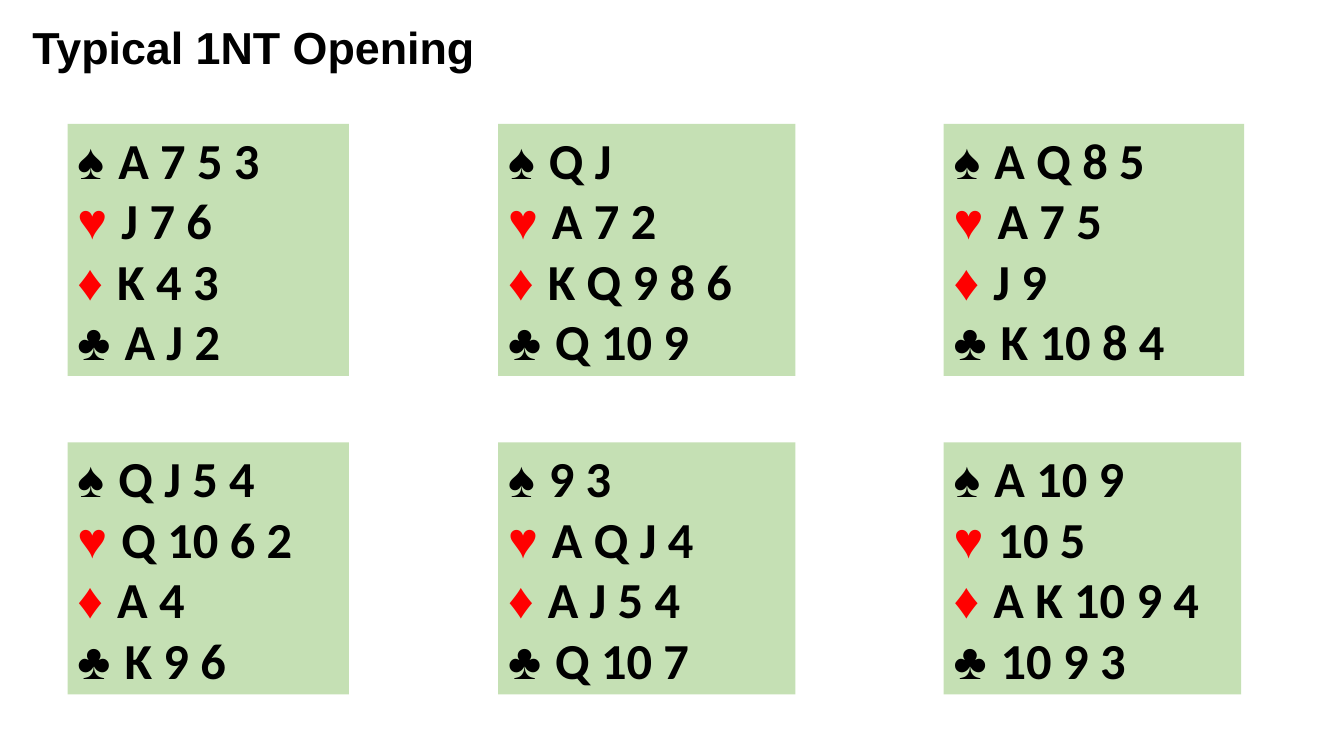
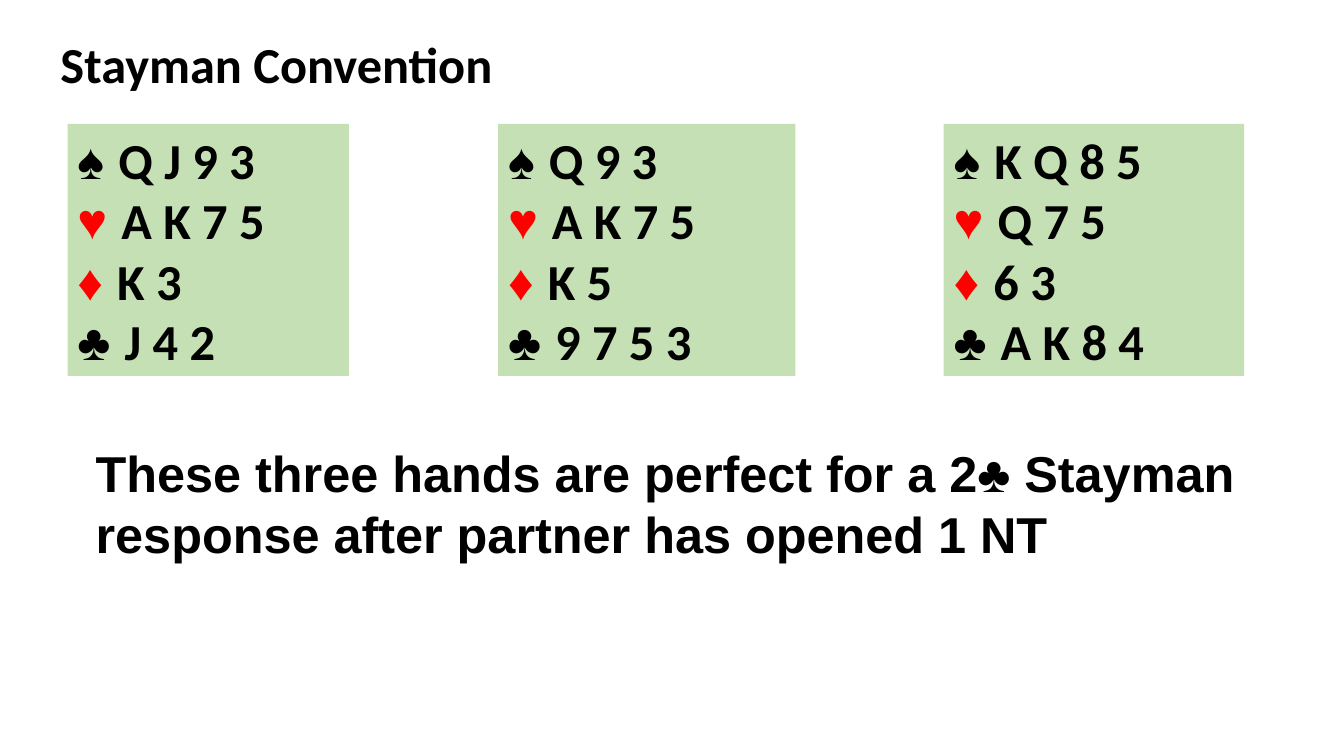
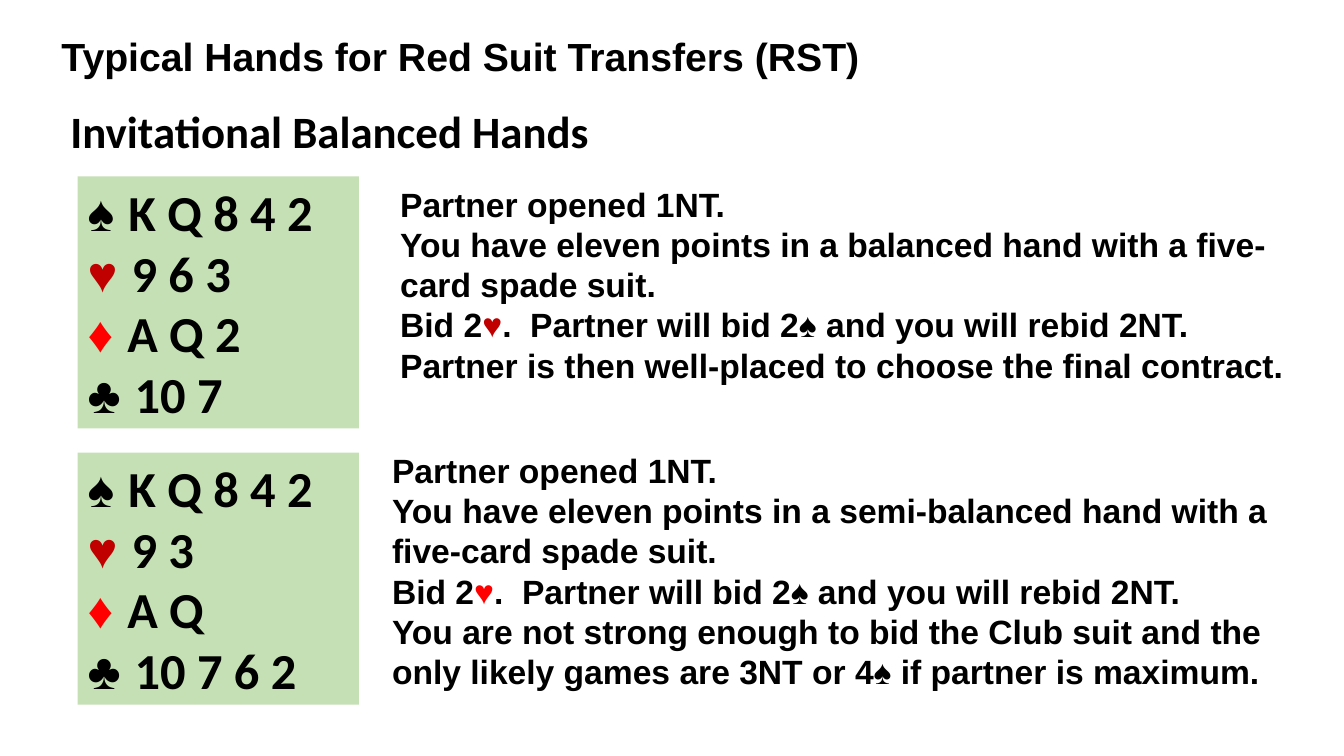
from pptx import Presentation
from pptx import util as u
from pptx.dml import color
from pptx.enum import shapes, text

PX = 9144
BLACK, RED, DARK_RED, GREEN = "000000", "FF0000", "C00000", "C5E0B4"
SUITS = "♠♥♦♣"
COLUMNS = (67, 494, 936)
WIDTHS = (279, 295, 298)
HAND_HEIGHT = 250


def rgb(value):
    return color.RGBColor.from_string(value)


def px(*lengths):
    return [n * PX for n in lengths]


def set_font(font, size, name=None, hue=BLACK):
    font.size = u.Pt(size)
    font.bold = True
    font.color.rgb = rgb(hue)
    if name:
        font.name = name


def set_frame(tf, anchor=text.MSO_ANCHOR.TOP):
    tf.word_wrap = True
    tf.auto_size = text.MSO_AUTO_SIZE.SHAPE_TO_FIT_TEXT
    tf.vertical_anchor = anchor
    tf.margin_left = tf.margin_right = 10 * PX
    tf.margin_top = tf.margin_bottom = 5 * PX


def paragraphs(tf, count):
    for _ in range(count - 1):
        tf.add_paragraph()
    for p in tf.paragraphs:
        p.alignment = text.PP_ALIGN.LEFT
    return tf.paragraphs


def add_run(p, words, name=None, hue=None):
    r = p.add_run()
    r.text = words
    if name:
        r.font.name = name
    if hue:
        r.font.color.rgb = rgb(hue)


def add_slide(prs, title, box, size, name):
    s = prs.slides.add_slide(prs.slide_layouts[5])
    sp = s.shapes.title
    sp.left, sp.top, sp.width, sp.height = px(*box)
    set_frame(sp.text_frame)
    p = paragraphs(sp.text_frame, 1)[0]
    add_run(p, title)
    set_font(p.font, size, name)
    return s


def add_text(s, box, lines, size, name="Arial", heart=RED, anchor=text.MSO_ANCHOR.TOP):
    tf = s.shapes.add_textbox(*px(*box)).text_frame
    set_frame(tf, anchor)
    for p, line in zip(paragraphs(tf, len(lines)), lines):
        set_font(p.font, size, name)
        before, suit, after = line.partition("♥")
        add_run(p, before)
        if suit:
            add_run(p, suit, hue=heart)
            add_run(p, after)


def add_hand(s, x, y, width, cards, heart=RED):
    sp = s.shapes.add_shape(shapes.MSO_SHAPE.RECTANGLE, *px(x, y, width, HAND_HEIGHT))
    sp.shadow.inherit = False
    sp.fill.solid()
    sp.fill.fore_color.rgb = rgb(GREEN)
    sp.line.fill.background()
    set_frame(sp.text_frame)
    hues = (BLACK, heart, RED, BLACK)
    for p, suit, hue, holding in zip(paragraphs(sp.text_frame, 4), SUITS, hues, cards):
        set_font(p.font, 36)
        add_run(p, suit + " ", "Arial", hue)
        add_run(p, holding, "Calibri", BLACK)


def add_hand_row(s, y, hands, widths=WIDTHS):
    for x, width, cards in zip(COLUMNS, widths, hands):
        add_hand(s, x, y, width, cards)


def add_example(s, y, cards, note_box, note, heart):
    add_hand(s, 77, y, 279, cards, DARK_RED)
    left, dy, width, height = note_box
    add_text(s, (left, y + dy, width, height), note, 24, heart=heart,
             anchor=text.MSO_ANCHOR.MIDDLE)


def opening_slide(prs):
    s = add_slide(prs, "Typical 1NT Opening", (22, 15, 619, 63), 32, "Arial")
    add_hand_row(s, 123, (
        ("A 7 5 3", "J 7 6", "K 4 3", "A J 2"),
        ("Q J", "A 7 2", "K Q 9 8 6", "Q 10 9"),
        ("A Q 8 5", "A 7 5", "J 9", "K 10 8 4")))
    add_hand_row(s, 439, (
        ("Q J 5 4", "Q 10 6 2", "A 4", "K 9 6"),
        ("9 3", "A Q J 4", "A J 5 4", "Q 10 7"),
        ("A 10 9", "10 5", "A K 10 9 4", "10 9 3")), (279, 295, 295))


def stayman_slide(prs):
    s = add_slide(prs, "Stayman Convention", (50, 28, 480, 70), 36, "Calibri")
    add_hand_row(s, 123, (
        ("Q J 9 3", "A K 7 5", "K 3", "J 4 2"),
        ("Q 9 3", "A K 7 5", "K 5", "9 7 5 3"),
        ("K Q 8 5", "Q 7 5", "6 3", "A K 8 4")))
    add_text(s, (85, 434, 1164, 130), [
        "These three hands are perfect for a 2♣ Stayman response "
        "after partner has opened 1 NT"], 36)


def transfer_slide(prs):
    s = add_slide(prs, "Typical Hands for Red Suit Transfers (RST)",
                  (51, 27, 881, 56), 28, "Arial")
    add_text(s, (60, 98, 607, 63), ["Invitational Balanced Hands"], 32, "Calibri")
    opened = "Partner opened 1NT."
    bid = "Bid 2♥.  Partner will bid 2♠ and you will rebid 2NT."
    points = "You have eleven points in a {} hand with a five-card spade suit."
    add_example(s, 175, ("K Q 8 4 2", "9 6 3", "A Q 2", "10 7"), (387, 2, 898, 210), [
        opened, points.format("balanced"), bid,
        "Partner is then well-placed to choose the final contract."], DARK_RED)
    add_example(s, 449, ("K Q 8 4 2", "9 3", "A Q", "10 7 6 2"), (379, -8, 937, 250), [
        opened, points.format("semi-balanced"), bid,
        "You are not strong enough to bid the Club suit and the only likely games "
        "are 3NT or 4♠ if partner is maximum."], RED)


def main():
    prs = Presentation()
    prs.slide_width, prs.slide_height = px(1333, 750)
    opening_slide(prs)
    stayman_slide(prs)
    transfer_slide(prs)
    prs.save("out.pptx")


if __name__ == "__main__":
    main()
